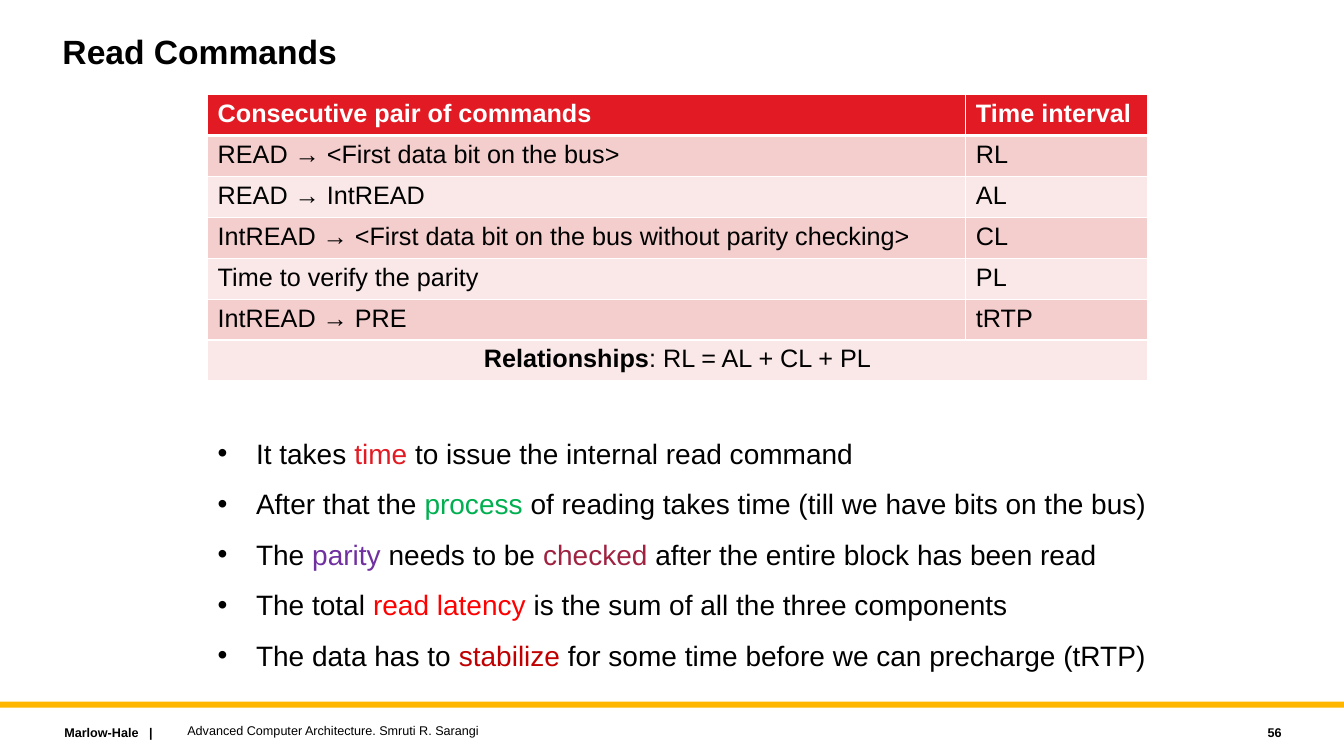
from dataclasses import dataclass

from lxml import etree
from pptx import Presentation
from pptx.dml.color import RGBColor
from pptx.enum.shapes import MSO_SHAPE
from pptx.enum.text import MSO_ANCHOR, MSO_AUTO_SIZE, PP_ALIGN
from pptx.oxml.ns import qn
from pptx.util import Inches, Pt

RECTANGLE = MSO_SHAPE.RECTANGLE
TOP, MIDDLE = MSO_ANCHOR.TOP, MSO_ANCHOR.MIDDLE
LEFT, CENTER, RIGHT = PP_ALIGN.LEFT, PP_ALIGN.CENTER, PP_ALIGN.RIGHT
NO_FIT = MSO_AUTO_SIZE.NONE


@dataclass(frozen=True)
class Theme:
    """Font, type sizes and colours of the slide."""
    font: str = "Arial"
    title: int = 24
    body: int = 20
    cell: int = 18
    footer: int = 9
    text: str = "000000"
    white: str = "FFFFFF"
    brand: str = "E21A23"
    bands: tuple = ("F4CDCD", "FAE8E8")
    bar: str = "FFB600"
    green: str = "00B050"
    purple: str = "7030A0"
    wine: str = "9F2241"
    red: str = "FF0000"
    dark_red: str = "C00000"


@dataclass(frozen=True)
class Box:
    """Rectangle in inches, divided into 100 columns and 100 rows."""
    x: float
    y: float
    w: float
    h: float

    def area(self, col, row, cols, rows):
        """Return the box that covers the given grid cells."""
        return Box(self.x + self.w * col / 100, self.y + self.h * row / 100,
                   self.w * cols / 100, self.h * rows / 100)

    def emu(self):
        """Return left, top, width and height as lengths."""
        return [Inches(v) for v in (self.x, self.y, self.w, self.h)]


THEME = Theme()
SLIDE = Box(0, 0, 13.33, 7.5)

COMMANDS = [
    ("Consecutive pair of commands", "Time interval"),
    ("READ → <First data bit on the bus>", "RL"),
    ("READ → IntREAD", "AL"),
    ("IntREAD → <First data bit on the bus without parity checking>", "CL"),
    ("Time to verify the parity", "PL"),
    ("IntREAD → PRE", "tRTP"),
]
POINTS = [
    [("It takes ",), ("time", THEME.brand),
     (" to issue the internal read command",)],
    [("After that the ",), ("process", THEME.green),
     (" of reading takes time (till we have bits on the bus)",)],
    [("The ",), ("parity", THEME.purple), (" needs to be ",),
     ("checked", THEME.wine), (" after the entire block has been read",)],
    [("The total ",), ("read latency ", THEME.red),
     ("is the sum of all the three components",)],
    [("The data has to ",), ("stabilize", THEME.dark_red),
     (" for some time before we can precharge (tRTP)",)],
]


def add_run(p, text, size, color=THEME.text, bold=False):
    """Append one formatted run to a paragraph."""
    r = p.add_run()
    r.text = text
    r.font.name = THEME.font
    r.font.size = Pt(size)
    r.font.bold = bold
    r.font.color.rgb = RGBColor.from_string(color)


def prepare(sp, box, anchor=TOP):
    """Place a text shape and return its text frame."""
    sp.left, sp.top, sp.width, sp.height = box.emu()
    tf = sp.text_frame
    tf.word_wrap = True
    tf.auto_size = NO_FIT
    tf.vertical_anchor = anchor
    return tf


def set_borders(cell, bottom, top):
    """Draw white lines on the four sides of a cell."""
    tc_pr = cell._tc.get_or_add_tcPr()
    widths = (("a:lnL", 1), ("a:lnR", 1), ("a:lnT", top), ("a:lnB", bottom))
    for i, (tag, width) in enumerate(widths):
        ln = etree.Element(qn(tag), w=str(Pt(width)))
        fill = etree.SubElement(ln, qn("a:solidFill"))
        etree.SubElement(fill, qn("a:srgbClr"), val=THEME.white)
        tc_pr.insert(i, ln)


def add_title(slide, box):
    """Fill the title placeholder."""
    p = prepare(slide.shapes.title, box).paragraphs[0]
    p.alignment = LEFT
    p.line_spacing = 0.9
    add_run(p, "Read Commands", THEME.title, bold=True)


def add_commands(slide, box):
    """Add the table of command pairs with its relationship row."""
    count = len(COMMANDS) + 1
    table = slide.shapes.add_table(count, 2, *box.emu()).table
    table.first_row = table.horz_banding = False
    for column, share in zip(table.columns, (80.69, 19.31)):
        column.width = Inches(box.w * share / 100)
    for i in range(count):
        table.rows[i].height = Inches(box.h / count)
        fill = THEME.bands[(i - 1) % 2] if i else THEME.brand
        for cell in table.rows[i].cells:
            cell.fill.solid()
            cell.fill.fore_color.rgb = RGBColor.from_string(fill)
            set_borders(cell, 1 if i else 3, 3 if i == 1 else 1)
    for i, texts in enumerate(COMMANDS):
        for j, text in enumerate(texts):
            p = table.cell(i, j).text_frame.paragraphs[0]
            add_run(p, text, THEME.cell, THEME.text if i else THEME.white, not i)
    total = table.cell(count - 1, 0)
    total.merge(table.cell(count - 1, 1))
    p = total.text_frame.paragraphs[0]
    p.alignment = CENTER
    add_run(p, "Relationships", THEME.cell, bold=True)
    add_run(p, ": RL = AL + CL + PL", THEME.cell)


def add_points(slide, box):
    """Fill the body placeholder with the bulleted points."""
    tf = prepare(slide.placeholders[1], box)
    for i, runs in enumerate(POINTS):
        p = tf.add_paragraph() if i else tf.paragraphs[0]
        p_pr = p._p.get_or_add_pPr()
        p_pr.set("marL", str(Inches(0.38)))
        p_pr.set("indent", str(-Inches(0.38)))
        etree.SubElement(p_pr, qn("a:buFont"), typeface=THEME.font)
        etree.SubElement(p_pr, qn("a:buChar"), char="•")
        p.space_before = Pt(12 if i else 0)
        for run in runs:
            add_run(p, run[0], THEME.body, *run[1:])


def add_footer(slide, box):
    """Add the coloured bar and the three footer texts."""
    bar = slide.shapes.add_shape(RECTANGLE, *box.area(0, 0, 100, 11).emu())
    bar.shadow.inherit = False
    bar.fill.solid()
    bar.fill.fore_color.rgb = RGBColor.from_string(THEME.bar)
    bar.line.fill.background()
    for text, col, row, cols, bold, align in (
            ("Marlow-Hale   |", 4.05, 33, 17.03, True, LEFT),
            ("Advanced Computer Architecture. Smruti R. Sarangi",
             13.2, 30, 60, False, LEFT),
            ("56", 85.6, 33, 10.5, True, RIGHT)):
        place = box.area(col, row, cols, 46)
        sp = slide.shapes.add_textbox(*place.emu())
        p = prepare(sp, place, MIDDLE).paragraphs[0]
        p.alignment = align
        add_run(p, text, THEME.footer, bold=bold)


def main():
    """Build the slide and save it."""
    prs = Presentation()
    prs.slide_width, prs.slide_height = Inches(SLIDE.w), Inches(SLIDE.h)
    slide = prs.slides.add_slide(prs.slide_layouts[1])
    add_footer(slide, SLIDE.area(0, 92.8, 100, 7.2))
    add_title(slide, SLIDE.area(3.9, 4, 75, 12))
    add_points(slide, SLIDE.area(15.45, 57.07, 75.17, 31.33))
    add_commands(slide, SLIDE.area(15.45, 12.53, 69.92, 37.87))
    prs.save("out.pptx")


if __name__ == "__main__":
    main()
